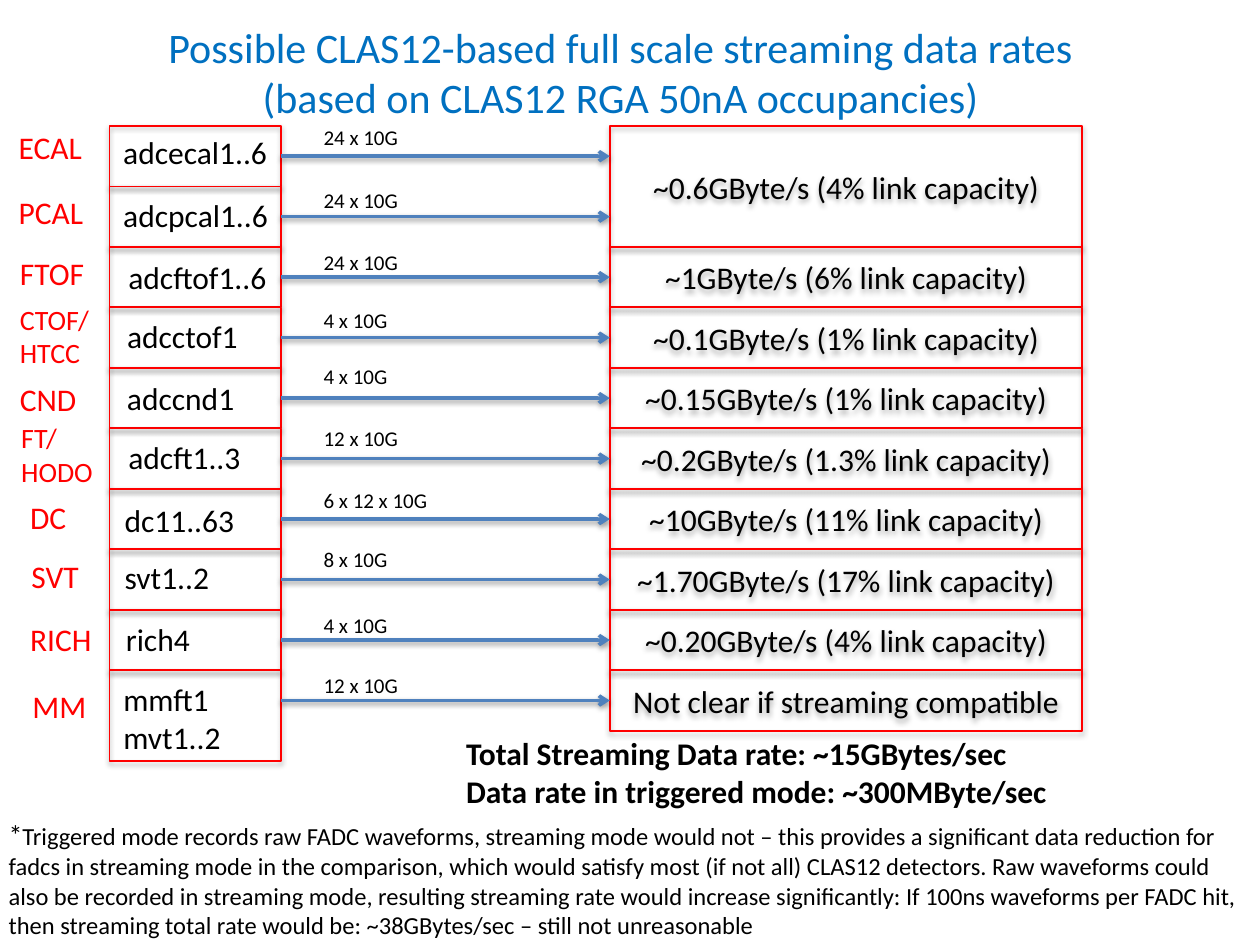
"""Build the slide of detector streaming data rates: detector, crates, link and rate per row."""
from lxml import etree
from pptx import Presentation
from pptx.dml.color import RGBColor
from pptx.enum.shapes import MSO_CONNECTOR, MSO_SHAPE
from pptx.enum.text import MSO_ANCHOR, MSO_AUTO_SIZE, PP_ALIGN
from pptx.oxml.ns import qn
from pptx.util import Inches, Pt

STRAIGHT = MSO_CONNECTOR.STRAIGHT
RECTANGLE = MSO_SHAPE.RECTANGLE
MIDDLE = MSO_ANCHOR.MIDDLE
GROW = MSO_AUTO_SIZE.SHAPE_TO_FIT_TEXT
LEFT, CENTER = PP_ALIGN.LEFT, PP_ALIGN.CENTER

BLACK = RGBColor(0x00, 0x00, 0x00)
RED = RGBColor(0xFF, 0x00, 0x00)
TITLE_BLUE = RGBColor(0x00, 0x70, 0xC0)
ARROW_BLUE = RGBColor(0x4F, 0x81, 0xBD)

GRID_TOP, ROW = 1, 0.48
CRATE_LEFT, CRATE_WIDTH = 0.87, 1.36
LINK_LEFT = 2.47
RATE_LEFT, RATE_WIDTH = 4.84, 3.75
LEFT_SIDE, RIGHT_SIDE = 1, 3

DETECTORS = [
    ("ECAL", 0.05, -0.03, 0.71), ("PCAL", 0.05, 0, 0.72), ("FTOF", 0.06, 0.01, 0.72),
    ("CTOF/\nHTCC", 0.06, -0.09, 0.76), ("CND", 0.06, 0.05, 0.66),
    ("FT/\nHODO", 0.07, -0.11, 0.78), ("DC", 0.14, 0.02, 0.49), ("SVT", 0.15, 0.01, 0.58),
    ("RICH", 0.14, 0.03, 0.69), ("MM", 0.16, 0.08, 0.63),
]
CRATES = [
    ("adcecal1..6", 0.88, 0.01, 1.36), ("adcpcal1..6", 0.88, 0.03, 1.36),
    ("adcftof1..6", 0.92, 0.04, 1.31), ("adcctof1", 0.91, 0.03, 1.09),
    ("adccnd1", 0.91, 0.04, 1.06), ("adcft1..3", 0.92, 0.03, 1.11),
    ("dc11..63", 0.89, 0.05, 1.08), ("svt1..2", 0.89, 0.02, 0.88),
    ("rich4", 0.9, 0.03, 0.72), ("mmft1\nmvt1..2", 0.88, 0.03, 0.98),
]
LINKS = [
    ("24 x 10G", LINK_LEFT, -0.06, 0.8), ("24 x 10G", LINK_LEFT, -0.04, 0.8),
    ("24 x 10G", LINK_LEFT, -0.03, 0.8), ("4 x 10G", LINK_LEFT, -0.05, 0.72),
    ("4 x 10G", LINK_LEFT, -0.08, 0.72), ("12 x 10G", LINK_LEFT, -0.07, 0.8),
    ("6 x 12 x 10G", LINK_LEFT, -0.06, 1.04), ("8 x 10G", LINK_LEFT, -0.07, 0.72),
    ("4 x 10G", LINK_LEFT, -0.03, 0.72), ("12 x 10G", LINK_LEFT, -0.03, 0.8),
]
RATES = [
    "~0.6GByte/s (4% link capacity)", "~1GByte/s (6% link capacity)",
    "~0.1GByte/s (1% link capacity)", "~0.15GByte/s (1% link capacity)",
    "~0.2GByte/s (1.3% link capacity)", "~10GByte/s (11% link capacity)",
    "~1.70GByte/s (17% link capacity)", "~0.20GByte/s (4% link capacity)",
    "Not clear if streaming compatible",
]
FOOTNOTE = (
    "Triggered mode records raw FADC waveforms, streaming mode would not – this provides a "
    "significant data reduction for fadcs in streaming mode in the comparison, which would "
    "satisfy most (if not all) CLAS12 detectors. Raw waveforms could also be recorded in "
    "streaming mode, resulting streaming rate would increase significantly: If 100ns "
    "waveforms per FADC hit, then streaming total rate would be: ~38GBytes/sec – still not "
    "unreasonable"
)


def write(box, text, size, color, align=LEFT, bold=False):
    frame = box.text_frame
    for number, line in enumerate(text.split("\n")):
        para = frame.add_paragraph() if number else frame.paragraphs[0]
        para.alignment = align
        span = para.add_run()
        span.text = line
        span.font.color.rgb = color
        for name, value in {"name": "Calibri", "size": Pt(size), "bold": bold}.items():
            setattr(span.font, name, value)
    return frame


def cast_shadow(shape, opacity, distance):
    effects = etree.SubElement(shape._element.spPr, qn("a:effectLst"))
    shadow = etree.SubElement(effects, qn("a:outerShdw"), blurRad=str(Pt(3.1)),
                              dist=str(Pt(distance)), dir="5400000", rotWithShape="0")
    tint = etree.SubElement(shadow, qn("a:srgbClr"), val="000000")
    etree.SubElement(tint, qn("a:alpha"), val=str(opacity * 1000))


deck = Presentation()
deck.slide_width, deck.slide_height = Inches(10), Inches(7.5)
page = deck.slides.add_slide(deck.slide_layouts[6])
shapes = page.shapes

last = len(CRATES) - 1
tops = [GRID_TOP + ROW * row for row in range(len(CRATES))]
frames = [(CRATE_LEFT, top, CRATE_WIDTH, ROW, "") for top in tops[:last]]
frames.append((CRATE_LEFT, tops[last], CRATE_WIDTH, 1.5 * ROW, ""))
frames.append((RATE_LEFT, GRID_TOP, RATE_WIDTH, 2 * ROW, RATES[0]))
frames += [(RATE_LEFT, top, RATE_WIDTH, ROW, rate) for top, rate in zip(tops[2:], RATES[1:])]

boxes = []
for left, top, width, height, text in frames:
    box = shapes.add_shape(RECTANGLE, Inches(left), Inches(top), Inches(width), Inches(height))
    box.fill.background()
    box.line.color.rgb = RED
    box.line.width = Pt(1)
    cast_shadow(box, 35, 1.8)
    box.text_frame.vertical_anchor = MIDDLE
    if text:
        write(box, text, 18, BLACK, CENTER)
    boxes.append(box)
crate_boxes, rate_boxes = boxes[:last + 1], boxes[last + 1:]

for row, top in enumerate(tops):
    middle = Inches(top + ROW / 2)
    arrow = shapes.add_connector(STRAIGHT, Inches(CRATE_LEFT + CRATE_WIDTH), middle,
                                 Inches(RATE_LEFT), middle)
    if row < last:
        arrow.begin_connect(crate_boxes[row], RIGHT_SIDE)
    if row > 1:
        arrow.end_connect(rate_boxes[row - 1], LEFT_SIDE)
    arrow.line.color.rgb = ARROW_BLUE
    arrow.line.width = Pt(2)
    etree.SubElement(arrow.line._get_or_add_ln(), qn("a:tailEnd"), type="arrow")
    cast_shadow(arrow, 38, 1.6)

for column, size, color in ((DETECTORS, 18, RED), (CRATES, 18, BLACK), (LINKS, 12, BLACK)):
    for top, (text, left, shift, width) in zip(tops, column):
        lines = text.count("\n") + 1
        points = 16 if color == RED and lines > 1 else size
        height = 0.1 + points / 60 * lines
        box = shapes.add_textbox(Inches(left), Inches(top + shift), Inches(width), Inches(height))
        frame = write(box, text, points, color)
        frame.word_wrap, frame.auto_size = False, GROW

title = shapes.add_textbox(Inches(1.2), Inches(0.12), Inches(7.45), Inches(0.91))
frame = write(title, "Possible CLAS12-based full scale streaming data rates\n"
              "(based on CLAS12 RGA 50nA occupancies)", 24, TITLE_BLUE, CENTER)
frame.word_wrap, frame.auto_size = False, GROW

totals = shapes.add_textbox(Inches(3.6), Inches(5.78), Inches(4.99), Inches(0.71))
frame = write(totals, "Total Streaming Data rate: ~15GBytes/sec\n"
              "Data rate in triggered mode: ~300MByte/sec", 18, BLACK, bold=True)
frame.word_wrap, frame.auto_size = True, GROW

footnote = shapes.add_textbox(Inches(-0.03), Inches(6.44), deck.slide_width, Inches(1.06))
frame = write(footnote, "*", 16, BLACK)
frame.word_wrap, frame.auto_size = True, GROW
span = frame.paragraphs[0].add_run()
span.text = FOOTNOTE
span.font.color.rgb = BLACK
span.font.name, span.font.size = "Calibri", Pt(14)

deck.save("out.pptx")
